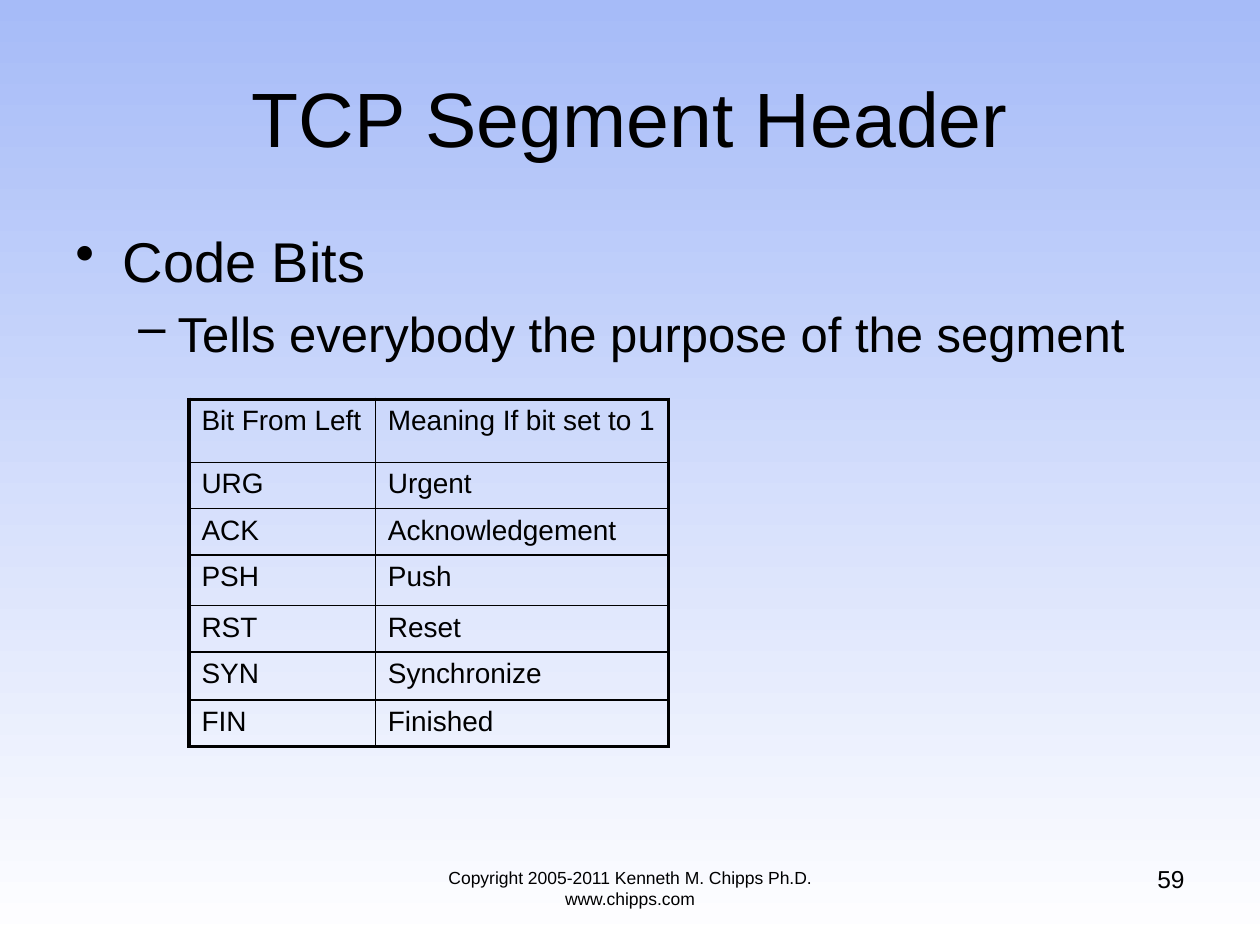
"""Builds the TCP Segment Header slide with its table of code bits."""
from dataclasses import dataclass

from lxml import etree
from pptx import Presentation
from pptx.dml.color import RGBColor
from pptx.enum import text
from pptx.oxml import ns
from pptx.slide import Slide
from pptx.util import Pt

BLACK = RGBColor(0x00, 0x00, 0x00)
SKY = RGBColor(0xA6, 0xBB, 0xF8)
WHITE = RGBColor(0xFF, 0xFF, 0xFF)

LEFT, CENTER, RIGHT = text.PP_ALIGN.LEFT, text.PP_ALIGN.CENTER, text.PP_ALIGN.RIGHT
THIN, THICK = Pt(1), Pt(2.25)

OUTLINE = [
    ("Code Bits", 32, "•", 27, -27),
    ("Tells everybody the purpose of the segment", 28, "–", 58.5, -22.5),
]
CODE_BITS = [
    ("Bit From Left", "Meaning If bit set to 1"),
    ("URG", "Urgent"),
    ("ACK", "Acknowledgement"),
    ("PSH", "Push"),
    ("RST", "Reset"),
    ("SYN", "Synchronize"),
    ("FIN", "Finished"),
]
COLUMN_WIDTHS = [106.5, 167.5]
ROW_HEIGHTS = [36, 26, 26.5, 29, 25, 27.5, 25]


@dataclass
class SlideBuilder:
    """Holds the text style and the current slide."""

    slide: Slide
    font: str = "Arial"
    color: RGBColor = BLACK

    def background(self, top, bottom):
        fill = self.slide.background.fill
        fill.gradient()
        fill.gradient_angle = 270
        for stop, color, position in zip(fill.gradient_stops, (top, bottom), (0, 1)):
            stop.color.rgb = color
            stop.position = position

    def set_text(self, paragraph, words, size, align=LEFT, before=0):
        paragraph.text = words
        for name, value in {"alignment": align, "space_before": Pt(before)}.items():
            setattr(paragraph, name, value)
        font = paragraph.runs[0].font
        for name, value in {"name": self.font, "size": Pt(size)}.items():
            setattr(font, name, value)
        font.color.rgb = self.color

    def title(self, words, left, top, width, height, size):
        title = self.slide.shapes.title
        box = {"left": left, "top": top, "width": width, "height": height}
        for name, value in box.items():
            setattr(title, name, Pt(value))
        title.text_frame.vertical_anchor = text.MSO_ANCHOR.MIDDLE
        self.set_text(title.text_frame.paragraphs[0], words, size, CENTER)

    def text_box(self, left, top, width, height):
        box = self.slide.shapes.add_textbox(Pt(left), Pt(top), Pt(width), Pt(height))
        box.text_frame.word_wrap = True
        return box.text_frame

    def label(self, words, left, top, width, height, size, align):
        frame = self.text_box(left, top, width, height)
        self.set_text(frame.paragraphs[0], words, size, align)

    def outline(self, items, left, top, width, height):
        frame = self.text_box(left, top, width, height)
        for level, (words, size, bullet, margin, indent) in enumerate(items):
            paragraph = frame.add_paragraph() if level else frame.paragraphs[0]
            self.set_text(paragraph, words, size, before=size * 0.2)
            paragraph.level = level
            properties = paragraph._p.get_or_add_pPr()
            properties.set("marL", str(Pt(margin)))
            properties.set("indent", str(Pt(indent)))
            etree.SubElement(properties, ns.qn("a:buChar"), char=bullet)

    def border(self, cell, widths):
        properties = cell._tc.get_or_add_tcPr()
        for side, width in widths.items():
            line = etree.SubElement(properties, ns.qn(f"a:ln{side}"), w=str(width))
            fill = etree.SubElement(line, ns.qn("a:solidFill"))
            etree.SubElement(fill, ns.qn("a:srgbClr"), val=str(self.color))

    def table(self, rows, left, top, widths, heights, size):
        frame = self.slide.shapes.add_table(
            len(rows), len(widths), Pt(left), Pt(top), Pt(sum(widths)), Pt(sum(heights)))
        table = frame.table
        table.first_row = table.horz_banding = False
        for column, width in zip(table.columns, widths):
            column.width = Pt(width)
        for row, height in zip(table.rows, heights):
            row.height = Pt(height)
        last_row, last_column = len(rows) - 1, len(widths) - 1
        for r, row in enumerate(rows):
            for c, words in enumerate(row):
                cell = table.cell(r, c)
                self.set_text(cell.text_frame.paragraphs[0], words, size, before=size * 0.2)
                self.border(cell, {
                    "L": THICK if c == 0 else THIN,
                    "R": THICK if c == last_column else THIN,
                    "T": THICK if r == 0 else THIN,
                    "B": THICK if r == last_row else THIN,
                })
                cell.fill.background()


def main():
    deck = Presentation()
    deck.slide_width, deck.slide_height = Pt(720), Pt(540)
    builder = SlideBuilder(deck.slides.add_slide(deck.slide_layouts[5]))
    builder.background(SKY, WHITE)
    builder.title("TCP Segment Header", 36, 21.6, 648, 90, 44)
    builder.outline(OUTLINE, 36, 126, 648, 356.4)
    builder.label("Copyright 2005-2011 Kenneth M. Chipps Ph.D. www.chipps.com",
                  216, 491.8, 288, 37.4, 10, CENTER)
    builder.label("59", 516, 490.3, 168, 37.4, 14, RIGHT)
    builder.table(CODE_BITS, 108, 228.2, COLUMN_WIDTHS, ROW_HEIGHTS, 16)
    deck.save("out.pptx")


if __name__ == "__main__":
    main()
